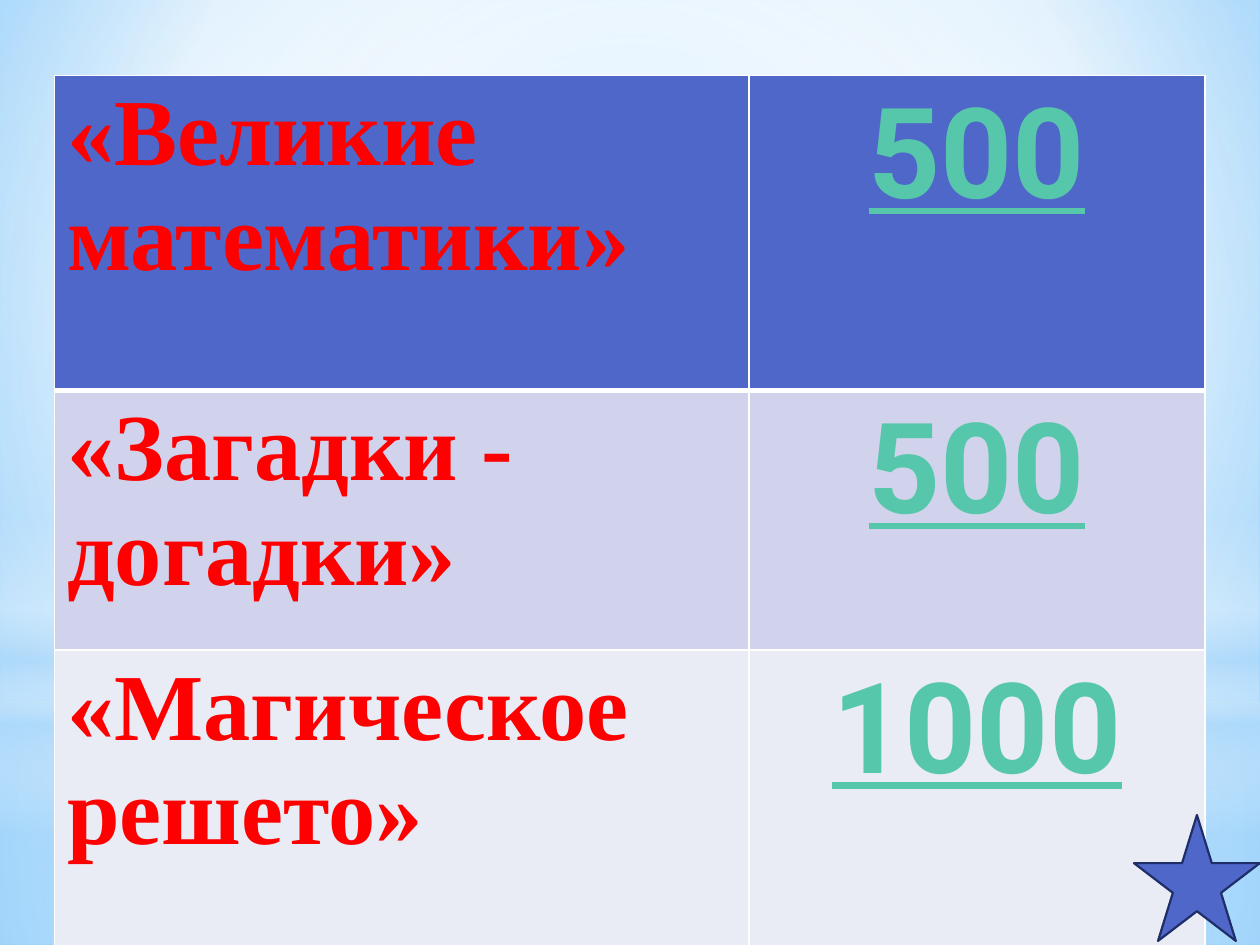
import pptx
import pptx.util
import pptx.dml.color
import pptx.enum.shapes
import pptx.enum.text
import pptx.oxml
import pptx.oxml.ns
from pptx.util import Cm, Pt

RGBColor = pptx.dml.color.RGBColor
SHAPES = pptx.enum.shapes.MSO_SHAPE
WHITE = RGBColor(0xFF, 0xFF, 0xFF)
HAZE = RGBColor(0xB4, 0xDC, 0xFA)
SKY = RGBColor(0x9E, 0xD5, 0xFF)
DEEP_SKY = RGBColor(0x5B, 0xB9, 0xFF)
INDIGO = RGBColor(0x4E, 0x67, 0xC8)
NAVY = RGBColor(0x1F, 0x2E, 0x69)
LAVENDER = RGBColor(0xD0, 0xD3, 0xEB)
PALE = RGBColor(0xE9, 0xEB, 0xF5)
RED = RGBColor(0xFF, 0x00, 0x00)
MINT = RGBColor(0x56, 0xC7, 0xAA)
NAMESPACE = pptx.oxml.ns.nsdecls("a")


def set_gradient(parent, stops, direction):
    marks = "".join(
        f'<a:gs pos="{place * 1000}"><a:srgbClr val="{color}">'
        f'<a:alpha val="{opacity * 1000}"/></a:srgbClr></a:gs>'
        for place, color, opacity in stops)
    gradient = pptx.oxml.parse_xml(
        f'<a:gradFill {NAMESPACE} rotWithShape="1"><a:gsLst>{marks}</a:gsLst>{direction}</a:gradFill>')
    solid = parent.find(pptx.oxml.ns.qn("a:solidFill"))
    parent.replace(solid, gradient)


def circle(left, top, right, bottom):
    return (f'<a:path path="circle"><a:fillToRect l="{left * 1000}" t="{top * 1000}" '
            f'r="{right * 1000}" b="{bottom * 1000}"/></a:path>')


deck = pptx.Presentation()
deck.slide_width = Cm(25.4)
deck.slide_height = Cm(19.05)
page = deck.slides.add_slide(deck.slide_layouts[6])

page.background.fill.solid()
page.background.fill.fore_color.rgb = WHITE
background = page.element.find(".//" + pptx.oxml.ns.qn("p:bgPr"))
set_gradient(background, [(0, SKY, 100), (60, WHITE, 100), (100, DEEP_SKY, 100)],
             circle(20, 10, 20, 60))

centre = circle(50, 50, 50, 50)
layers = [
    (SHAPES.RECTANGLE, 14.17, 4.88, centre,
     [(0, WHITE, 91), (37, WHITE, 76), (100, HAZE, 79)]),
    (SHAPES.RECTANGLE, 0, 14.17, centre,
     [(0, WHITE, 89), (48, WHITE, 62), (100, HAZE, 79)]),
    (SHAPES.RECTANGLE, 10.46, 6.35, '<a:lin ang="5400000" scaled="0"/>',
     [(0, WHITE, 0), (29, WHITE, 30), (45, HAZE, 40), (55, WHITE, 26),
      (65, HAZE, 60), (100, WHITE, 0)]),
    (SHAPES.OVAL, 4.45, 14.17, centre, [(0, WHITE, 100), (56, WHITE, 0)]),
]
for kind, top, height, direction, stops in layers:
    layer = page.shapes.add_shape(kind, 0, Cm(top), deck.slide_width, Cm(height))
    layer.shadow.inherit = False
    layer.line.fill.background()
    layer.fill.solid()
    set_gradient(layer.element.spPr, stops, direction)

rows = [
    ("«Великие математики»", "500", INDIGO, 6.35),
    ("«Загадки - догадки»", "500", LAVENDER, 5.23),
    ("«Магическое решето»", "1000", PALE, 6.35),
]
styles = [
    ("Times New Roman", 54, RED, False, pptx.enum.text.PP_ALIGN.LEFT),
    ("Roboto", 72, MINT, True, pptx.enum.text.PP_ALIGN.CENTER),
]
table = page.shapes.add_table(len(rows), 2, Cm(1.1), Cm(1.52), Cm(23.19), Cm(17.93)).table
table.horz_banding = False
for column, width in zip(table.columns, (14, 9.19)):
    column.width = Cm(width)

for row_index, (topic, points, fill_color, height) in enumerate(rows):
    table.rows[row_index].height = Cm(height)
    for column_index, text in enumerate((topic, points)):
        font_name, size, color, underline, alignment = styles[column_index]
        cell = table.cell(row_index, column_index)
        cell.fill.solid()
        cell.fill.fore_color.rgb = fill_color
        para = cell.text_frame.paragraphs[0]
        para.alignment = alignment
        span = para.add_run()
        span.text = text
        span.font.name = font_name
        span.font.size = Pt(size)
        span.font.bold = True
        span.font.underline = underline
        span.font.color.rgb = color
        properties = cell._tc.get_or_add_tcPr()
        for position, side in enumerate("LRTB"):
            heavy = (row_index, side) in ((0, "B"), (1, "T"))
            border = pptx.oxml.parse_xml(
                f'<a:ln{side} {NAMESPACE} w="{Pt(3 if heavy else 1)}"><a:solidFill>'
                f'<a:srgbClr val="{WHITE}"/></a:solidFill></a:ln{side}>')
            properties.insert(position, border)

star = page.shapes.add_shape(SHAPES.STAR_5_POINT, Cm(22.86), Cm(16.43), Cm(2.54), Cm(2.54))
star.shadow.inherit = False
star.fill.solid()
star.fill.fore_color.rgb = INDIGO
star.line.color.rgb = NAVY
star.line.width = Pt(1.25)

deck.save("out.pptx")
